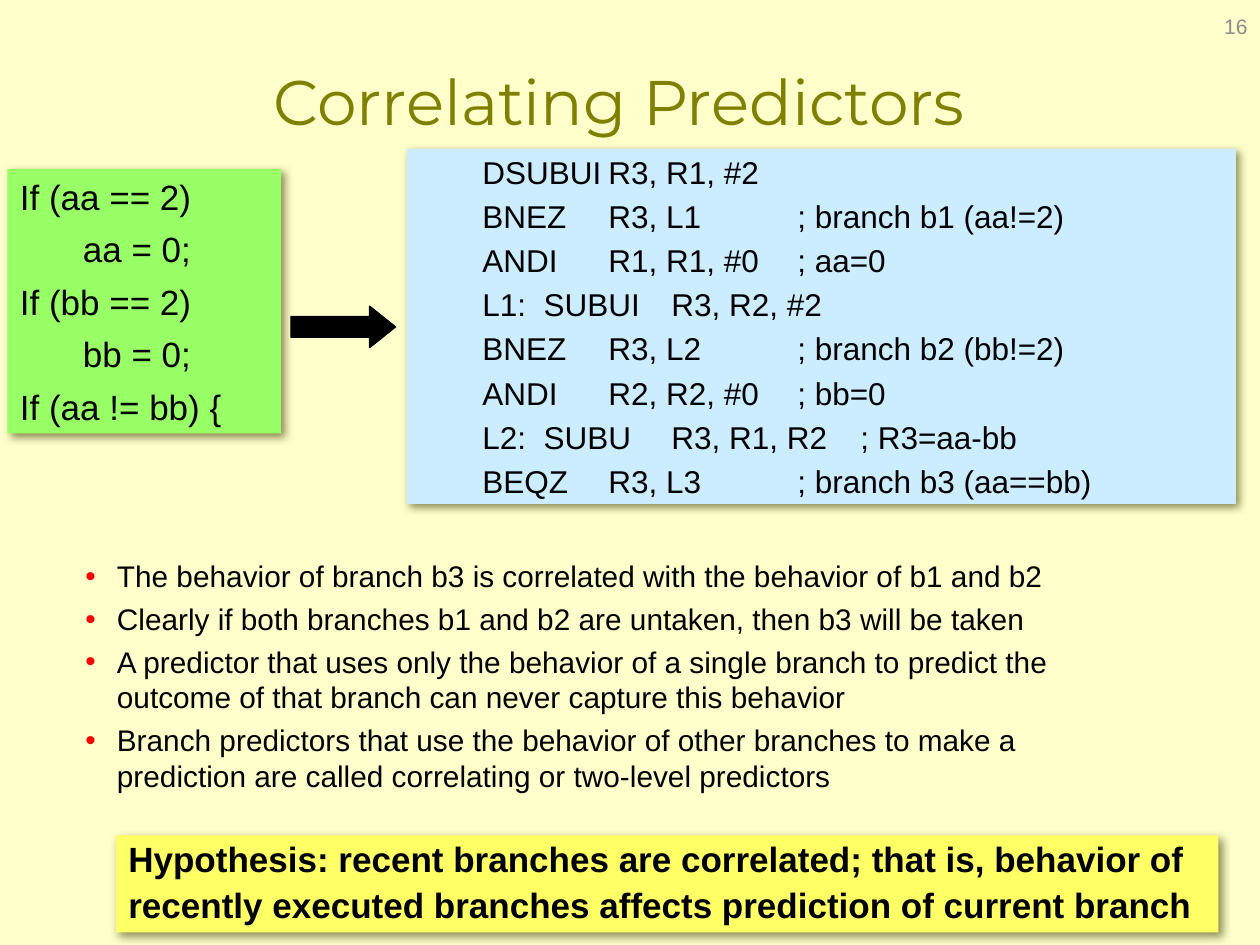
from lxml import etree
from pptx import Presentation
from pptx.dml.color import RGBColor
from pptx.enum.shapes import MSO_SHAPE as Shape
from pptx.enum.text import MSO_ANCHOR as Anchor, PP_ALIGN as Align
from pptx.oxml import parse_xml
from pptx.oxml.ns import nsdecls, qn
from pptx.util import Inches, Pt

CREAM = RGBColor(0xFF, 0xFF, 0xCC)
GREEN = RGBColor(0x99, 0xFF, 0x66)
BLUE = RGBColor(0xCC, 0xEC, 0xFF)
YELLOW = RGBColor(0xFF, 0xFF, 0x66)
OLIVE = RGBColor(0x80, 0x80, 0x00)
SHADOW = RGBColor(0x66, 0x66, 0x33)
RED = RGBColor(0xFF, 0x00, 0x00)
GRAY = RGBColor(0x8C, 0x8C, 0x8C)
BLACK = RGBColor(0, 0, 0)

SOURCE_CODE = ["If (aa == 2)", "\taa = 0;", "If (bb == 2)", "\tbb = 0;", "If (aa != bb) {"]
ASSEMBLY = [
    "DSUBUI\tR3, R1, #2",
    "BNEZ\tR3, L1\t\t; branch b1 (aa!=2)",
    "ANDI\tR1, R1, #0\t; aa=0",
    "L1:  SUBUI\tR3, R2, #2",
    "BNEZ\tR3, L2\t\t; branch b2 (bb!=2)",
    "ANDI\tR2, R2, #0 \t; bb=0",
    "L2:  SUBU\tR3, R1, R2\t; R3=aa-bb",
    "BEQZ\tR3, L3\t\t; branch b3 (aa==bb)",
]
OBSERVATIONS = [
    "The behavior of branch b3 is correlated with the behavior of b1 and b2",
    "Clearly if both branches b1 and b2 are untaken, then b3 will be taken",
    "A predictor that uses only the behavior of a single branch to predict the "
    "outcome of that branch can never capture this behavior",
    "Branch predictors that use the behavior of other branches to make a "
    "prediction are called correlating or two-level predictors",
]
HYPOTHESIS = [
    "Hypothesis: recent branches are correlated; that is, behavior of",
    "recently executed branches affects prediction of current branch",
]


class SlideBuilder:
    def __init__(self, page, body_font="Arial", title_font="Montserrat"):
        self.page = page
        self.body_font = body_font
        self.title_font = title_font
        page.background.fill.solid()
        page.background.fill.fore_color.rgb = CREAM

    def fill_frame(self, frame, lines, size, color=BLACK, font=None, bold=False,
                   align=Align.LEFT, anchor=Anchor.MIDDLE, before=0, spacing=None, indent=0):
        """Fill a text frame with one paragraph per line and return the paragraphs."""
        frame.word_wrap = True
        frame.vertical_anchor = anchor
        for index, line in enumerate(lines):
            para = frame.add_paragraph() if index else frame.paragraphs[0]
            para.alignment = align
            para.space_before = Pt(before)
            para.line_spacing = spacing
            if indent:
                para._p.get_or_add_pPr().set("marL", str(Inches(indent)))
            span = para.add_run()
            span.text = line
            span.font.name = font or self.body_font
            span.font.size = Pt(size)
            span.font.bold = bold
            span.font.color.rgb = color
        return frame.paragraphs

    def title(self, text, area):
        box = self.page.shapes.title
        box.left, box.top, box.width, box.height = map(Inches, area)
        self.fill_frame(box.text_frame, [text], 36, OLIVE, self.title_font, align=Align.CENTER)

    def shape(self, kind, area, fill):
        shape = self.page.shapes.add_shape(kind, *map(Inches, area))
        shape.shadow.inherit = False
        shape.fill.solid()
        shape.fill.fore_color.rgb = fill
        shape.line.fill.background()
        return shape

    def panel(self, lines, area, fill, size, **style):
        """Add a filled rectangle with a soft shadow and left-aligned lines."""
        panel = self.shape(Shape.RECTANGLE, area, fill)
        effects = panel._element.spPr.find(qn("a:effectLst"))
        effects.append(parse_xml(
            f'<a:outerShdw {nsdecls("a")} blurRad="{Pt(5)}" dist="{Pt(3)}" dir="2700000" '
            f'algn="ctr" rotWithShape="0"><a:srgbClr val="{SHADOW}">'
            '<a:alpha val="75000"/></a:srgbClr></a:outerShdw>'))
        self.fill_frame(panel.text_frame, lines, size, **style)

    def arrow(self, area):
        arrow = self.shape(Shape.RIGHT_ARROW, area, BLACK)
        arrow.adjustments[0] = 0.5
        arrow.adjustments[1] = 0.625
        arrow.line.color.rgb = BLACK
        arrow.line.width = Pt(0.75)

    def text(self, lines, area, size, **style):
        box = self.page.shapes.add_textbox(*map(Inches, area))
        return self.fill_frame(box.text_frame, lines, size, **style)

    def bullets(self, lines, area, size, **style):
        for para in self.text(lines, area, size, indent=0.25, anchor=Anchor.TOP, **style):
            props = para._p.get_or_add_pPr()
            props.set("indent", str(-Inches(0.25)))
            color = etree.SubElement(props, qn("a:buClr"))
            etree.SubElement(color, qn("a:srgbClr"), val=str(RED))
            etree.SubElement(props, qn("a:buFont"), typeface=self.body_font)
            etree.SubElement(props, qn("a:buChar"), char="•")


def main():
    deck = Presentation()
    deck.slide_width, deck.slide_height = Inches(10), Inches(7.5)
    slide = SlideBuilder(deck.slides.add_slide(deck.slide_layouts[5]))

    slide.title("Correlating Predictors", (0.58, 0.17, 8.67, 1.25))
    slide.panel(SOURCE_CODE, (0.06, 1.34, 2.17, 2.1), GREEN, 20, before=6)
    slide.panel(ASSEMBLY, (3.23, 1.18, 6.58, 2.82), BLUE, 18, before=3.6, indent=0.5)
    slide.arrow((2.31, 2.43, 0.83, 0.33))
    slide.bullets(OBSERVATIONS, (0.58, 4.38, 8.67, 2.79), 17, before=4)
    slide.panel(HYPOTHESIS, (0.92, 6.63, 8.75, 0.77), YELLOW, 20,
                bold=True, before=4.6, spacing=0.9)
    slide.text(["16"], (7.67, 0.01, 2.33, 0.4), 12, color=GRAY, align=Align.RIGHT)

    deck.save("out.pptx")


if __name__ == "__main__":
    main()
